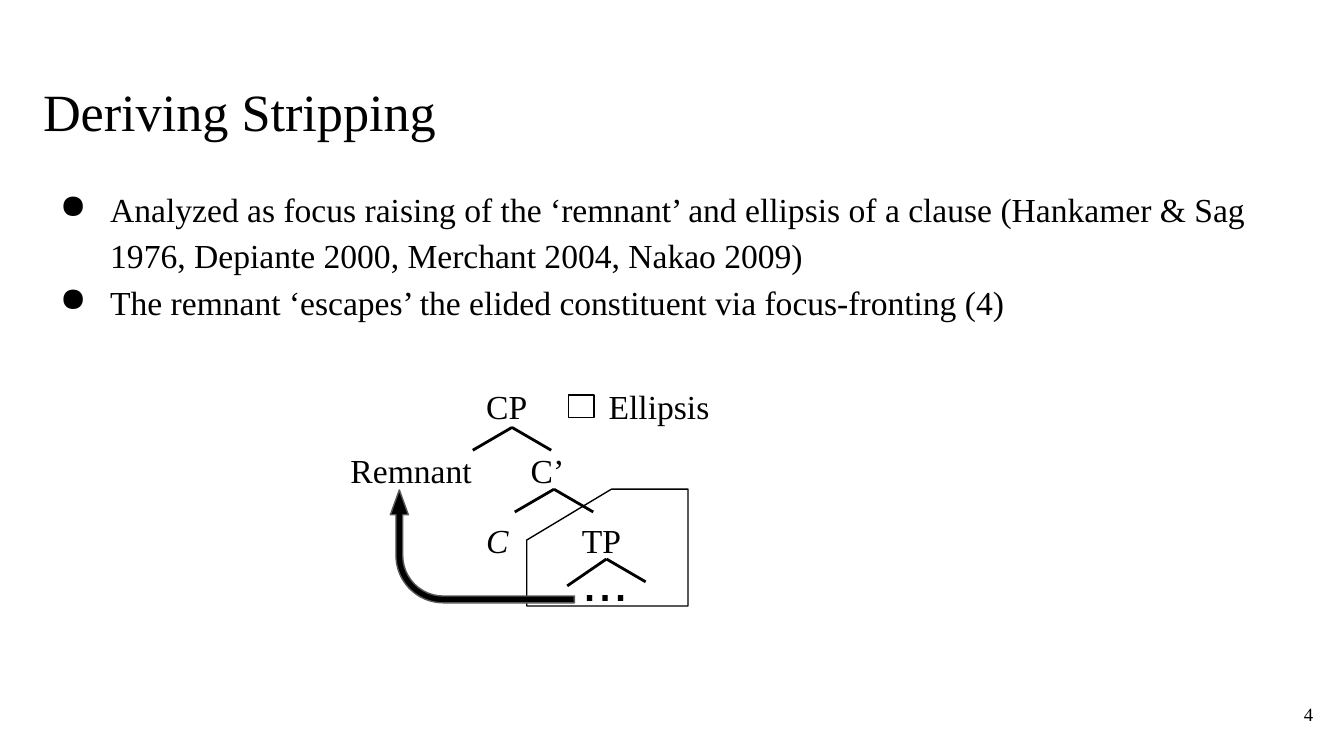
from lxml import etree
from pptx import Presentation
from pptx.dml.color import RGBColor
from pptx.enum.shapes import MSO_CONNECTOR, MSO_SHAPE
from pptx.enum.text import MSO_ANCHOR, PP_ALIGN
from pptx.oxml.ns import qn
from pptx.util import Pt

STRAIGHT = MSO_CONNECTOR.STRAIGHT
TOP, MIDDLE = MSO_ANCHOR.TOP, MSO_ANCHOR.MIDDLE
LEFT, RIGHT = PP_ALIGN.LEFT, PP_ALIGN.RIGHT
COLORS = {"ink": "000000", "arrow edge": "595959"}
SERIF, SANS = "Times New Roman", "Arial"
INSET = 7.2

TITLE = "Deriving Stripping"
POINTS = [
    "Analyzed as focus raising of the ‘remnant’ and ellipsis of a clause "
    "(Hankamer & Sag 1976, Depiante 2000, Merchant 2004, Nakao 2009)",
    "The remnant ‘escapes’ the elided constituent via focus-fronting (4)",
]
PAGE_NUMBER = "4"

# label, (left, top, width, height), italic
NODES = [
    ("CP", (253.4, 199.4, 44.6, 21), False),
    ("C’", (277.2, 234, 49, 14.4), False),
    ("TP", (304.6, 271.4, 58.3, 21), False),
    ("C", (253.4, 271.4, 44.6, 21), True),
    ("Ellipsis", (319, 199.4, 100, 30.2), False),
    ("Remnant", (180.7, 234, 81.4, 30.2), False),
]
# apex x, apex y, drop of left branch, drop of right branch
BRANCHINGS = [
    (274.3, 229, 12.2, 12.2),
    (296.8, 262.1, 12.2, 12.2),
    (324.9, 299.5, 14.4, 12.2),
]
HALF_SPREAD = 21
ELLIPSIS_KEY = (304.6, 211.7, 13.7, 12.2)
ELIDED_REGION = [(327.6, 262.1), (282.2, 289.4), (282.2, 324.7),
                 (368.6, 324.7), (368.6, 262.1)]
RAISING_ARROW = (228.2, 243.4, 60.5, 98.6)
ARROW_ADJUSTMENTS = (0.06, 0.08, 0.22, 0.42)


def rgb(name):
    return RGBColor.from_string(COLORS[name])


def points(*lengths):
    return [Pt(length) for length in lengths]


def add_text(slide, box, lines, size, font=SERIF, align=LEFT, anchor=TOP, italic=False):
    frame = slide.shapes.add_textbox(*points(*box)).text_frame
    frame.word_wrap = True
    frame.vertical_anchor = anchor
    frame.margin_left = frame.margin_right = Pt(INSET)
    frame.margin_top = frame.margin_bottom = Pt(INSET)
    frame.text = "\n".join(lines)
    for paragraph in frame.paragraphs:
        paragraph.alignment = align
        paragraph.font.name = font
        paragraph.font.size = Pt(size)
        paragraph.font.italic = italic
        paragraph.font.color.rgb = rgb("ink")
    return frame


def add_bullet(paragraph):
    paragraph.line_spacing = 1.15
    properties = paragraph._p.get_or_add_pPr()
    properties.set("marL", str(Pt(36)))
    properties.set("indent", str(-Pt(27)))
    bullet = etree.Element(qn("a:buChar"), char="●")
    properties.find(qn("a:lnSpc")).addnext(bullet)


def add_branch(slide, start, end):
    branch = slide.shapes.add_connector(STRAIGHT, *points(*start, *end))
    branch.line.color.rgb = rgb("ink")
    branch.line.width = Pt(1.5)
    etree.SubElement(branch._element.spPr, qn("a:effectLst"))


def style_shape(shape, edge="ink", fill=None):
    shape.shadow.inherit = False
    if fill:
        shape.fill.solid()
        shape.fill.fore_color.rgb = rgb(fill)
    else:
        shape.fill.background()
    shape.line.color.rgb = rgb(edge)
    shape.line.width = Pt(0.75)


def add_tree(slide):
    for x, y, left_drop, right_drop in BRANCHINGS:
        add_branch(slide, (x - HALF_SPREAD, y + left_drop), (x, y))
        add_branch(slide, (x, y), (x + HALF_SPREAD, y + right_drop))
    for label, box, italic in NODES:
        add_text(slide, box, [label], 18, italic=italic)


def add_ellipsis_marks(slide):
    style_shape(slide.shapes.add_shape(MSO_SHAPE.RECTANGLE, *points(*ELLIPSIS_KEY)))
    corners = [points(*corner) for corner in ELIDED_REGION]
    outline = slide.shapes.build_freeform(*corners[0])
    outline.add_line_segments(corners[1:], close=True)
    style_shape(outline.convert_to_shape())


def add_raising_arrow(slide):
    arrow = slide.shapes.add_shape(MSO_SHAPE.BENT_ARROW, *points(*RAISING_ARROW))
    arrow.rotation = 270
    for index, value in enumerate(ARROW_ADJUSTMENTS):
        arrow.adjustments[index] = value
    style_shape(arrow, edge="arrow edge", fill="ink")


def main():
    deck = Presentation()
    deck.slide_width, deck.slide_height = points(720, 405)
    slide = deck.slides.add_slide(deck.slide_layouts[6])
    add_text(slide, (16, 35.5, 679, 45), [TITLE], 28)
    body = add_text(slide, (16, 90.7, 679, 88), POINTS, 18)
    for paragraph in body.paragraphs:
        add_bullet(paragraph)
    add_text(slide, (667.4, 367.2, 43.2, 31), [PAGE_NUMBER], 10, align=RIGHT, anchor=MIDDLE)
    add_tree(slide)
    add_ellipsis_marks(slide)
    add_raising_arrow(slide)
    add_text(slide, (304.6, 285.1, 69.8, 48.2), ["..."], 30, font=SANS)
    deck.save("out.pptx")


if __name__ == "__main__":
    main()
